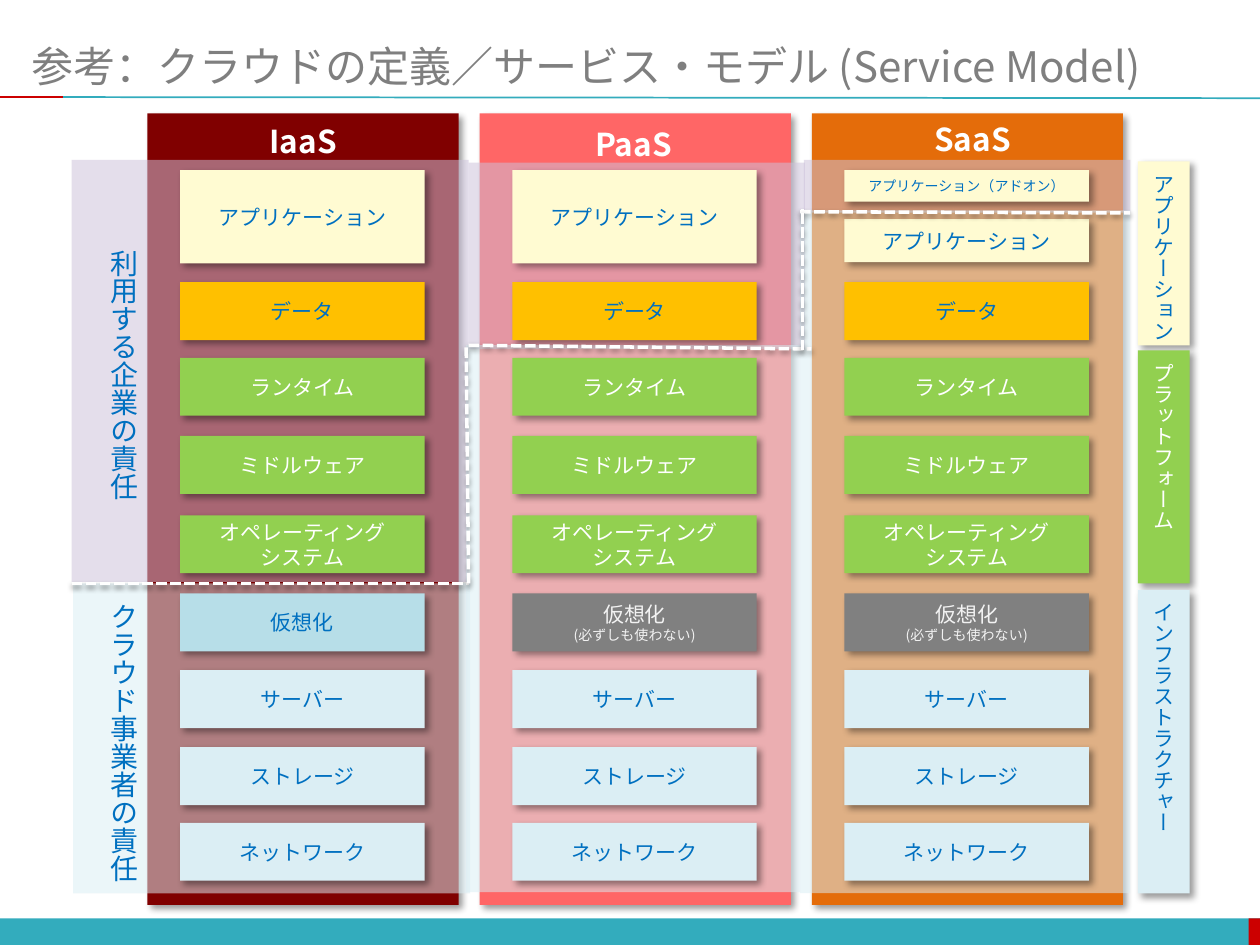
from collections import namedtuple
from dataclasses import dataclass

from lxml.etree import SubElement
from pptx import Presentation
from pptx.dml.color import RGBColor as RGB
from pptx.enum.dml import MSO_LINE as Dash
from pptx.enum.shapes import MSO_CONNECTOR as Link, MSO_SHAPE as Kind
from pptx.enum.text import MSO_ANCHOR as Anchor, MSO_AUTO_SIZE as Fit, PP_ALIGN as Align
from pptx.oxml.ns import qn
from pptx.util import Pt

Box = namedtuple("Box", "x y w h")


@dataclass(frozen=True)
class Theme:
    font: str = "Noto Sans CJK JP"
    teal: str = "33ACBD"
    red: str = "CC0000"
    grey: str = "7F7F7F"
    blue: str = "0070C0"
    white: str = "FFFFFF"
    pale: str = "F2F2F2"
    cream: str = "FFFBD2"
    gold: str = "FFC000"
    green: str = "92D050"
    aqua: str = "B7DEE8"
    ice: str = "DBEEF4"
    dark: str = "808080"
    lilac: str = "CCC1DA"
    title: int = 24
    head: int = 18
    side: int = 16
    body: int = 12
    small: int = 8


T = Theme()
SOFT = dict(alpha=40, blur=4, dist=3, angle=45)
DROP = dict(alpha=38, blur=3.1, dist=1.6, angle=90)
COLS = [("IaaS", "800000", 0, 1.4), ("PaaS", "FF6666", -1, 2.9), ("SaaS", "E46C0A", 3, 0)]
STEP, COL_W, COL_X = 189.8, 177.8, 43.3
TILE_X, TILE_W, TILE_H = 18.7, 139.7, 33.1
OS = "オペレーティング\nシステム"
TILES = [
    (96.5, "データ", T.gold, T.blue), (139.7, "ランタイム", T.green, T.white),
    (184.3, "ミドルウェア", T.green, T.white), (229.7, OS, T.green, T.white),
    (318.2, "サーバー", T.ice, T.blue), (362.2, "ストレージ", T.ice, T.blue),
    (405.4, "ネットワーク", T.ice, T.blue),
]
ZONES = [
    (0, 26.6, 226.8, 241.2, T.lilac), (226.8, 28.1, 192.2, 106.6, T.lilac),
    (418.4, 26.6, 186.5, 30.2, T.lilac), (0.8, 268.6, 226.8, 177.1, T.ice),
    (225.4, 132.5, 190.8, 312.5, T.ice), (416.2, 55.4, 188.6, 390.2, T.ice),
]
EDGES = [
    (0, 268.6, 226.8, 268.6), (226.8, 132.5, 422.7, 134.6), (416.2, 56.2, 604.8, 56.9),
    (226.8, 268.6, 225.4, 132.5), (417.6, 135.4, 417.6, 54.7),
]
RAIL = [
    (27.4, 105.1, "アプリケーション", T.cream, T.blue),
    (135.4, 133.2, "プラットフォーム", T.green, T.white),
    (272.2, 173.5, "インフラストラクチャー", T.ice, T.blue),
]
SIDES = [(70.6, 152.6, "利用する企業の責任"), (272.9, 168.5, "クラウド事業者の責任")]


def apply(item, values):
    for key, value in values.items():
        setattr(item, key, value)


def inner(box, x, y, w, h):
    """Box at an offset inside another box."""
    return Box(box.x + x, box.y + y, w, h)


def shade(props, alpha, blur, dist, angle):
    """Put an outer shadow into shape properties."""
    effects = props.find(qn("a:effectLst"))
    if effects is None:
        effects = SubElement(props, qn("a:effectLst"))
    drop = SubElement(effects, qn("a:outerShdw"), blurRad=str(Pt(blur)), dist=str(Pt(dist)),
                      dir=str(angle * 60000), algn="tl", rotWithShape="0")
    tint = SubElement(drop, qn("a:srgbClr"), val="000000")
    SubElement(tint, qn("a:alpha"), val=str(alpha * 1000))


def panel(slide, box, fill, alpha=None, shadow=None, kind=Kind.RECTANGLE):
    shape = slide.shapes.add_shape(kind, *map(Pt, box))
    if kind == Kind.ROUNDED_RECTANGLE:
        shape.adjustments[0] = 0
    shape.shadow.inherit = False
    shape.fill.solid()
    shape.fill.fore_color.rgb = RGB.from_string(fill)
    shape.line.fill.background()
    if alpha:
        tint = shape.element.spPr.find(".//" + qn("a:srgbClr"))
        SubElement(tint, qn("a:alpha"), val=str(alpha * 1000))
    if shadow:
        shade(shape.element.spPr, **shadow)
    return shape


def write(shape, text, color, sizes, bold=False, align=Align.CENTER, upright=False, **frame):
    """Fill a shape with one paragraph per line; the last size repeats."""
    body = shape.text_frame
    apply(body, dict(word_wrap=True, vertical_anchor=Anchor.MIDDLE) | frame)
    if upright:
        body.word_wrap = False
        body._txBody.bodyPr.set("vert", "eaVert")
    for n, line in enumerate(text.split("\n")):
        para = body.add_paragraph() if n else body.paragraphs[0]
        para.alignment = align
        run = para.add_run()
        run.text = line
        size = sizes[min(n, len(sizes) - 1)]
        apply(run.font, dict(name=T.font, size=Pt(size), bold=bold))
        run.font.color.rgb = RGB.from_string(color)
        SubElement(run._r.get_or_add_rPr(), qn("a:ea"), typeface=T.font)


def label(slide, box, text, color, size, **style):
    write(slide.shapes.add_textbox(*map(Pt, box)), text, color, [size], **style)


def rule(slide, start, end, color, width, dash=None, shadow=None):
    line = slide.shapes.add_connector(Link.STRAIGHT, *map(Pt, (*start, *end)))
    line.line.color.rgb = RGB.from_string(color)
    apply(line.line, dict(width=Pt(width), dash_style=dash))
    if shadow:
        shade(line.element.spPr, **shadow)
    else:
        SubElement(line.element.spPr, qn("a:effectLst"))


def frame(slide, box):
    """Footer bar and the rule below the title."""
    foot = inner(box, 0, 524.8, box.w, 15.6)
    panel(slide, foot, T.teal)
    panel(slide, inner(foot, 713.5, 0, 7, foot.h), T.red)
    y = box.y + 55.5
    rule(slide, (box.x + 36, y), (box.x + box.w, y + 0.6), T.teal, 1)
    rule(slide, (box.x, y), (box.x + 36, y), T.red, 1)


def heading(slide, box):
    label(slide, box, "参考：クラウドの定義／サービス・モデル (Service Model)", T.grey, T.title,
          align=Align.LEFT, margin_left=0, margin_right=0)


def zones(slide, box):
    """Translucent areas of responsibility."""
    for *place, fill in ZONES:
        panel(slide, inner(box, *place), fill, alpha=53)


def stack(slide, box, name):
    """Layers of one service model."""
    if name == "SaaS":
        tops = [(60.5, 24.5, "アプリケーション", T.body),
                (32.4, 18, "アプリケーション（アドオン）", T.small)]
    else:
        tops = [(32.4, 53.3, "アプリケーション", T.body)]
    tiles = [(y, h, text, T.cream, T.blue, [size]) for y, h, text, size in tops]
    tiles += [(y, TILE_H, text, fill, ink, [T.body]) for y, text, fill, ink in TILES]
    virtual = (("仮想化", T.aqua, T.blue) if name == "IaaS"
               else ("仮想化\n(必ずしも使わない)", T.dark, T.pale))
    tiles.append((274.3, TILE_H, *virtual, [T.body, T.small]))
    for y, h, text, fill, ink, sizes in tiles:
        tile = panel(slide, inner(box, TILE_X, y, TILE_W, h), fill, shadow=SOFT)
        write(tile, text, ink, sizes)


def border(slide, box):
    """Dashed boundary between user and provider."""
    for x1, y1, x2, y2 in EDGES:
        rule(slide, (box.x + x1, box.y + y1), (box.x + x2, box.y + y2),
             T.white, 2, Dash.SQUARE_DOT, DROP)


def rails(slide, box):
    """Upright labels on both sides."""
    for y, h, text, fill, ink in RAIL:
        bar = panel(slide, inner(box, 609.2, y, 29.5, h), fill, shadow=SOFT,
                    kind=Kind.ROUNDED_RECTANGLE)
        write(bar, text, ink, [T.body], upright=True)
    for y, h, text in SIDES:
        label(slide, inner(box, 8.7, y, 33.8, h), text, T.blue, T.side, upright=True,
              vertical_anchor=Anchor.TOP, auto_size=Fit.SHAPE_TO_FIT_TEXT)


def board(slide, box):
    cols = [inner(box, COL_X + n * STEP, 0, COL_W, box.h) for n in range(len(COLS))]
    for col, (_, fill, _, _) in zip(cols, COLS):
        panel(slide, col, fill, shadow=SOFT, kind=Kind.ROUNDED_RECTANGLE)
    zones(slide, box)
    for col, (name, *_) in zip(cols, COLS):
        stack(slide, col, name)
    border(slide, box)
    for col, (name, _, dx, dy) in zip(cols, COLS):
        label(slide, inner(col, 58 + dx, dy, 61.8, 28.8), name, T.white, T.head, bold=True,
              word_wrap=False, vertical_anchor=Anchor.TOP, auto_size=Fit.SHAPE_TO_FIT_TEXT)
    rails(slide, box)


def main():
    deck = Presentation()
    apply(deck, dict(slide_width=Pt(720), slide_height=Pt(540)))
    slide = deck.slides.add_slide(deck.slide_layouts[6])
    frame(slide, Box(0, 0, 720, 540))
    heading(slide, Box(18, 20.9, 684, 33.1))
    board(slide, Box(41, 64.8, 640, 452.2))
    deck.save("out.pptx")


if __name__ == "__main__":
    main()
